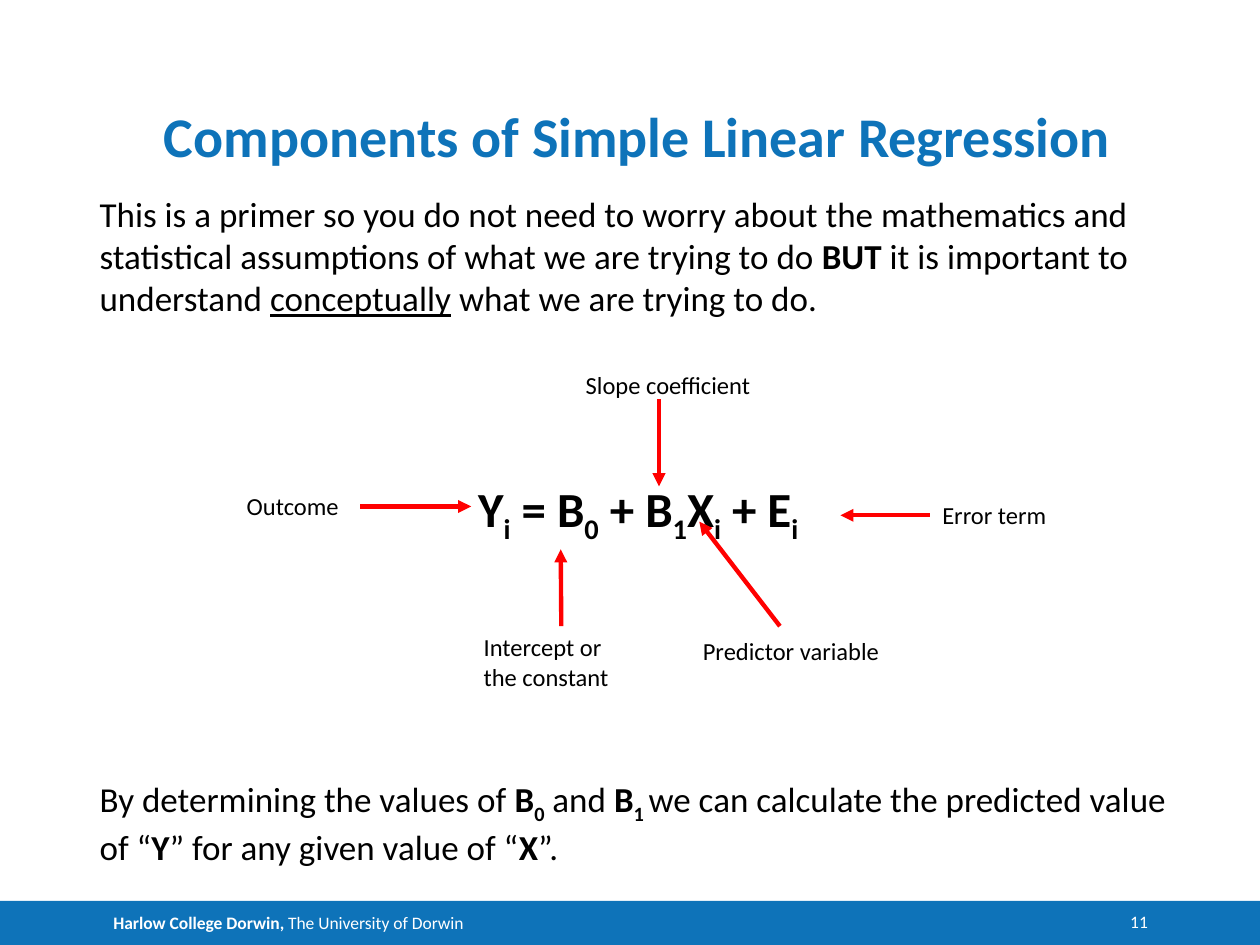
from dataclasses import dataclass

from lxml.etree import SubElement
from pptx import Presentation
from pptx.dml.color import RGBColor
from pptx.enum.shapes import MSO_CONNECTOR, MSO_SHAPE
from pptx.enum.text import MSO_ANCHOR, MSO_AUTO_SIZE, PP_ALIGN
from pptx.oxml.ns import qn
from pptx.util import Inches, Pt


@dataclass(frozen=True)
class Theme:
    font: str = "Calibri"
    blue: RGBColor = RGBColor(0x0E, 0x73, 0xB9)
    red: RGBColor = RGBColor(0xFF, 0, 0)
    black: RGBColor = RGBColor(0, 0, 0)
    white: RGBColor = RGBColor(0xFF, 0xFF, 0xFF)
    title: int = 32
    formula: int = 28
    body: int = 20
    label: int = 14
    small: int = 10
    line: float = 2.5


THEME = Theme()

INTRO = [
    ("This is a primer so you do not need to worry about the mathematics and "
     "statistical assumptions of what we are trying to do ", ""),
    ("BUT", "b"), (" it is important to understand ", ""),
    ("conceptually", "u"), (" what we are trying to do.", ""),
]
FORMULA = [
    ("Y", "b"), ("i", "bs"), (" = B", "b"), ("0", "bs"), (" + B", "b"),
    ("1", "bs"), ("X", "b"), ("i", "bs"), (" + E", "b"), ("i", "bs"),
]
CLOSING = [
    ("By determining the values of ", ""), ("B", "b"), ("0", "bs"),
    (" and ", ""), ("B", "b"), ("1 ", "bs"),
    ("we can calculate the predicted value of “", ""), ("Y", "b"),
    ("” for any given value of “", ""), ("X", "b"), ("”.", ""),
]

LABELS = [
    ("Outcome", (1.86, 3.85, 1, 0.34), 3, (2.86, 4.02), (3.74, 4.02)),
    ("Intercept or the constant", (3.74, 4.97, 1.43, 0.57), 0,
     (4.45, 4.97), (4.45, 4.36)),
    ("Slope coefficient", (4.55, 2.89, 1.53, 0.34), None,
     (5.23, 3.17), (5.23, 3.86)),
    ("Error term", (7.38, 3.92, 1.05, 0.34), 1, (7.38, 4.09), (6.67, 4.09)),
    ("Predictor variable", (5.48, 5, 1.63, 0.34), None,
     (6.19, 4.97), (5.55, 4.14)),
]


def write(para, text, size=THEME.body, color=THEME.black,
          align=PP_ALIGN.LEFT, before=0):
    para.alignment = align
    para.space_before = Pt(before)
    runs = [(text, "")] if isinstance(text, str) else text
    for words, marks in runs:
        run = para.add_run()
        run.text = words
        font = run.font
        font.name, font.size = THEME.font, Pt(size)
        font.color.rgb = color
        font.bold = "b" in marks
        font.underline = "u" in marks
        if "s" in marks:
            run._r.get_or_add_rPr().set("baseline", "-25000")


def set_frame(shape, inset=(0, 0), anchor=MSO_ANCHOR.TOP):
    frame = shape.text_frame
    frame.word_wrap = True
    frame.auto_size = MSO_AUTO_SIZE.NONE
    frame.vertical_anchor = anchor
    frame.margin_left = frame.margin_right = Inches(inset[0])
    frame.margin_top = frame.margin_bottom = Inches(inset[1])
    return frame


def add_box(slide, place, inset=(0, 0)):
    box = slide.shapes.add_textbox(*map(Inches, place))
    return box, set_frame(box, inset)


def add_title(slide):
    title = slide.shapes.title
    title.left, title.top, title.width, title.height = map(
        Inches, (0.96, 0.73, 8.2, 0.61))
    frame = set_frame(title, anchor=MSO_ANCHOR.BOTTOM)
    write(frame.paragraphs[0], [("Components of Simple Linear Regression", "b")],
          size=THEME.title, color=THEME.blue, align=PP_ALIGN.CENTER)


def add_body(slide):
    frame = add_box(slide, (0.79, 1.53, 8.55, 5.2))[1]
    write(frame.paragraphs[0], INTRO)
    write(frame.add_paragraph(), FORMULA, size=THEME.formula,
          align=PP_ALIGN.CENTER, before=91.4)
    write(frame.add_paragraph(), CLOSING, before=132.4)


def add_label(slide, text, place):
    box, frame = add_box(slide, place, inset=(0.1, 0.05))
    write(frame.paragraphs[0], text, size=THEME.label)
    return box


def add_arrow(slide, start, end, box, side):
    arrow = slide.shapes.add_connector(
        MSO_CONNECTOR.STRAIGHT, *map(Inches, start + end))
    if side is not None:
        arrow.begin_connect(box, side)
    arrow.line.color.rgb = THEME.red
    arrow.line.width = Pt(THEME.line)
    SubElement(arrow.line._get_or_add_ln(), qn("a:tailEnd"), type="triangle")
    SubElement(arrow._element.spPr, qn("a:effectLst"))


def add_footer(slide):
    bar = slide.shapes.add_shape(
        MSO_SHAPE.RECTANGLE, *map(Inches, (0, 7.15, 10, 0.35)))
    bar.shadow.inherit = False
    bar.fill.solid()
    bar.fill.fore_color.rgb = THEME.blue
    bar.line.fill.background()
    frame = set_frame(bar, inset=(0.1, 0), anchor=MSO_ANCHOR.MIDDLE)
    frame.margin_left = Inches(0.9)
    write(frame.paragraphs[0],
          [("Harlow College Dorwin, ", "b"), ("The University of Dorwin", "")],
          size=THEME.small, color=THEME.white)
    number = add_box(slide, (8.7, 7.23, 0.41, 0.17))[1]
    write(number.paragraphs[0], "11", size=THEME.small, color=THEME.white,
          align=PP_ALIGN.RIGHT)


def main():
    deck = Presentation()
    deck.slide_width, deck.slide_height = Inches(10), Inches(7.5)
    slide = deck.slides.add_slide(deck.slide_layouts.get_by_name("Title Only"))
    add_footer(slide)
    add_title(slide)
    add_body(slide)
    boxes = [add_label(slide, text, place) for text, place, *_ in LABELS]
    for box, (_, _, side, start, end) in zip(boxes, LABELS):
        add_arrow(slide, start, end, box, side)
    deck.save("out.pptx")


if __name__ == "__main__":
    main()
